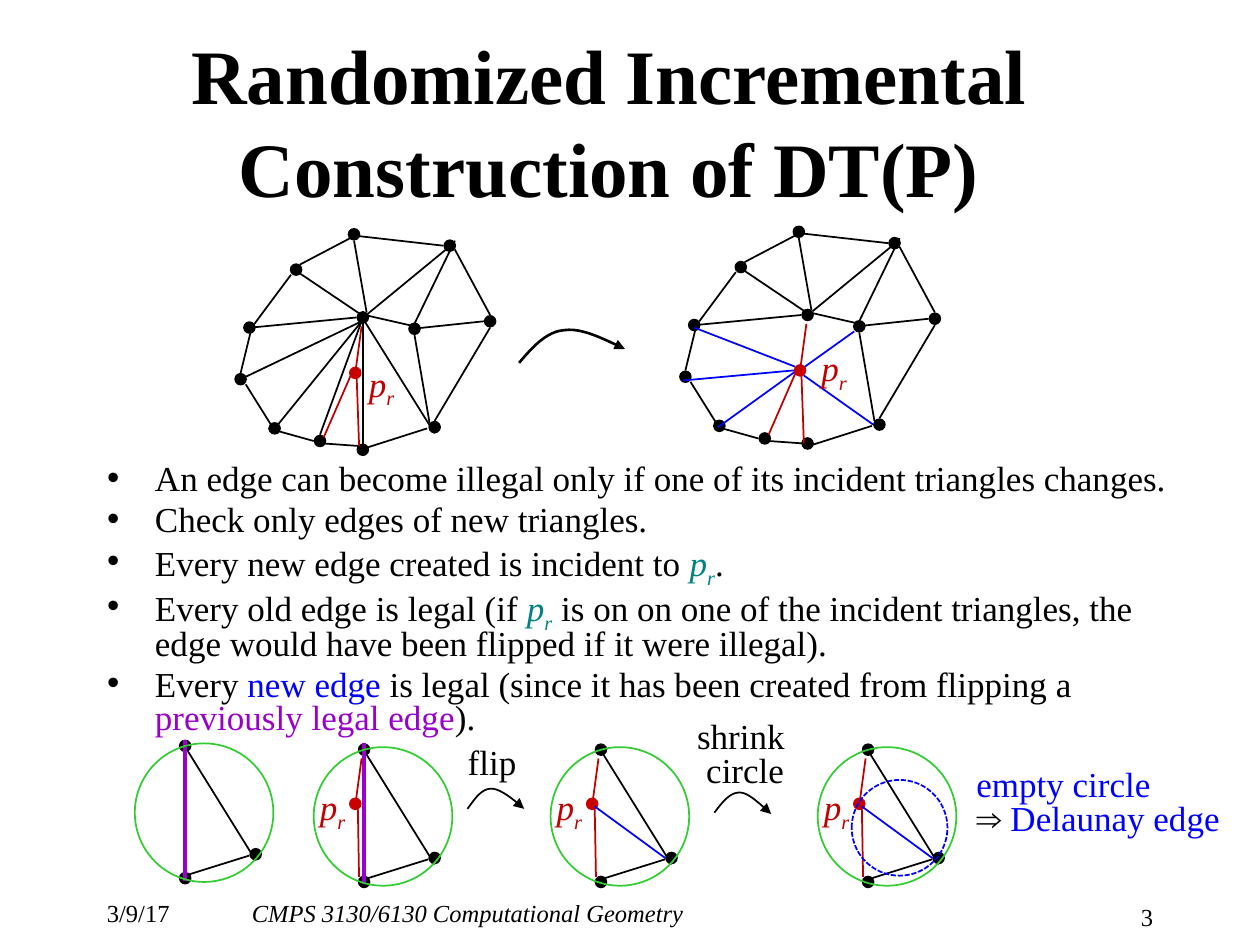
from typing import NamedTuple

from lxml.etree import SubElement
from pptx import Presentation
from pptx.dml.color import RGBColor
from pptx.enum.dml import MSO_LINE
from pptx.enum.shapes import MSO_CONNECTOR, MSO_SHAPE
from pptx.enum.text import MSO_ANCHOR, MSO_AUTO_SIZE, PP_ALIGN
from pptx.oxml.ns import qn
from pptx.util import Inches, Pt

FONT = "Times New Roman"
BLACK, BLUE, TEAL, PURPLE = "000000", "0000FF", "008380", "9900CC"
RED, DOT_RED, GREEN = "C00000", "CC0000", "33CC33"
DOT = 0.1

Point = tuple[float, float]


class Edge(NamedTuple):
    start: Point
    end: Point
    color: str = BLACK
    width: float = 1


class Run(NamedTuple):
    text: str
    color: str = BLACK
    italic: bool = False
    subscript: bool = False


class Stage(NamedTuple):
    """One circle drawing, placed by the corner of its top dot."""
    origin: Point
    has_point: bool = True
    has_old_edge: bool = False
    has_new_edge: bool = False


class CurvedArrow(NamedTuple):
    """A start point and two cubic segments of three points each."""
    points: list[Point]
    width: float = 1


MESH_DOTS = [(2.13, 3.35), (1.86, 2.96), (1.93, 2.55), (2.3, 2.09), (2.83, 2.47),
             (3.24, 2.56), (2.76, 1.81), (3.52, 1.9), (3.4, 3.34), (2.49, 3.45), (3.84, 2.5)]
MESH_EDGES = [
    Edge((2.78, 1.89), (2.38, 2.1)), Edge((2.02, 2.57), (2.31, 2.18)),
    Edge((1.91, 2.96), (2, 2.59)), Edge((2.15, 3.37), (1.95, 3.05)),
    Edge((2.49, 3.5), (2.13, 3.4)), Edge((2.85, 3.54), (2.57, 3.52)),
    Edge((3.39, 3.4), (2.92, 3.55)), Edge((3.29, 2.66), (3.41, 3.36)),
    Edge((2.85, 2.49), (3.29, 2.59)), Edge((2.38, 2.17), (2.87, 2.5)),
    Edge((2.81, 1.91), (2.91, 2.48)), Edge((3.54, 1.98), (2.92, 2.49)),
    Edge((3.61, 1.91), (3.27, 2.61)), Edge((2.81, 1.87), (3.52, 1.95)),
    Edge((3.61, 1.98), (3.89, 2.5)), Edge((3.89, 2.6), (3.45, 3.34)),
    Edge((3.84, 2.55), (3.27, 2.61)), Edge((1.99, 2.6), (2.83, 2.52)),
]
OLD_EDGES = [
    Edge((1.93, 3), (2.85, 2.56)), Edge((2.19, 3.39), (2.92, 2.49)),
    Edge((2.54, 3.45), (2.87, 2.55)), Edge((2.88, 3.59), (2.88, 2.47)),
    Edge((3.45, 3.44), (2.9, 2.56)),
]
NEW_EDGES = [
    Edge((1.98, 2.62), (2.78, 2.93), BLUE), Edge((1.89, 3.04), (2.77, 2.96), BLUE),
    Edge((3.4, 3.39), (2.85, 3), BLUE), Edge((3.25, 2.65), (2.83, 2.95), BLUE),
    Edge((2.17, 3.41), (2.78, 2.97), BLUE),
]
POINT_EDGES = [
    Edge((2.82, 2.96), (2.87, 2.59), RED), Edge((2.57, 3.47), (2.81, 2.92), RED),
    Edge((2.85, 3.54), (2.83, 2.97), RED),
]
STAGES = [
    Stage((1.42, 5.87), has_point=False, has_old_edge=True),
    Stage((2.84, 5.9), has_old_edge=True),
    Stage((4.72, 5.9), has_new_edge=True),
    Stage((6.84, 5.9), has_new_edge=True),
]
ARROWS = [
    CurvedArrow([(4.12, 2.88), (4.23, 2.75), (4.34, 2.63), (4.48, 2.62),
                 (4.62, 2.6), (4.79, 2.69), (4.96, 2.77)], 1.5),
    CurvedArrow([(3.71, 6.42), (3.77, 6.34), (3.82, 6.26), (3.9, 6.26),
                 (3.97, 6.26), (4.07, 6.34), (4.16, 6.42)]),
    CurvedArrow([(5.67, 6.45), (5.73, 6.37), (5.79, 6.29), (5.87, 6.29),
                 (5.94, 6.29), (6.03, 6.38), (6.12, 6.46)]),
]
POINT_NAME = [Run("p", TEAL, True), Run("r", TEAL, True, True)]
POINT_LABEL = [Run("p", RED, True), Run("r", RED, True, True)]
BULLETS = [
    [Run("An edge can become illegal only if one of its incident triangles changes.")],
    [Run("Check only edges of new triangles.")],
    [Run("Every new edge created is incident to "), *POINT_NAME, Run(".")],
    [Run("Every old edge is legal (if "), *POINT_NAME,
     Run(" is on on one of the incident triangles, the edge would have been flipped"
         " if it were illegal).")],
    [Run("Every "), Run("new edge ", BLUE),
     Run("is legal (since it has been created from flipping a "),
     Run("previously legal edge", PURPLE), Run(").")],
]


def rgb(color: str) -> RGBColor:
    return RGBColor.from_string(color)


def shift(point: Point, offset: Point) -> Point:
    return point[0] + offset[0], point[1] + offset[1]


def place(shape, left: float, top: float, width: float, height: float) -> None:
    shape.left, shape.top = Inches(left), Inches(top)
    shape.width, shape.height = Inches(width), Inches(height)


def add_runs(paragraph, runs: list[Run], size: float = 20, bold: bool = False) -> None:
    """Add each run; a run that is a newline becomes a line break."""
    for item in runs:
        if item.text == "\n":
            paragraph.add_line_break()
            continue
        run = paragraph.add_run()
        run.text = item.text
        font = run.font
        font.name, font.size, font.bold, font.italic = FONT, Pt(size), bold, item.italic
        font.color.rgb = rgb(item.color)
        if item.subscript:
            run._r.get_or_add_rPr().set("baseline", "-25000")


def add_text(shapes, box: tuple[float, float, float, float], runs: list[Run],
             size: float = 20, align=PP_ALIGN.LEFT, spacing: float = 1.0,
             wrap: bool = False) -> None:
    text_box = shapes.add_textbox(*map(Inches, box))
    text_box.text_frame.word_wrap = wrap
    paragraph = text_box.text_frame.paragraphs[0]
    paragraph.alignment, paragraph.line_spacing = align, spacing
    add_runs(paragraph, runs, size)


def add_dot(shapes, corner: Point, color: str = BLACK) -> None:
    dot = shapes.add_shape(MSO_SHAPE.OVAL, *map(Inches, (*corner, DOT, DOT)))
    dot.shadow.inherit = False
    dot.fill.solid()
    dot.fill.fore_color.rgb = rgb(color)
    dot.line.fill.background()


def add_circle(shapes, corner: Point, size: float, color: str, dash=None) -> None:
    circle = shapes.add_shape(MSO_SHAPE.OVAL, *map(Inches, (*corner, size, size)))
    circle.shadow.inherit = False
    circle.fill.background()
    circle.line.color.rgb, circle.line.width = rgb(color), Pt(1)
    if dash:
        circle.line.dash_style = dash


def add_edges(shapes, edges: list[Edge], offset: Point = (0, 0)) -> None:
    for edge in edges:
        ends = (*shift(edge.start, offset), *shift(edge.end, offset))
        line = shapes.add_connector(MSO_CONNECTOR.STRAIGHT, *map(Inches, ends))
        line.line.color.rgb, line.line.width = rgb(edge.color), Pt(edge.width)
        SubElement(line._element.spPr, qn("a:effectLst"))


def bezier(points: list[Point], t: float) -> Point:
    weights = ((1 - t) ** 3, 3 * t * (1 - t) ** 2, 3 * t * t * (1 - t), t ** 3)
    x, y = (sum(w * p[axis] for w, p in zip(weights, points)) for axis in (0, 1))
    return Inches(x), Inches(y)


def add_curved_arrow(shapes, arrow: CurvedArrow, steps: int = 12) -> None:
    track = [bezier(arrow.points[i:i + 4], step / steps)
             for i in (0, 3) for step in range(1, steps + 1)]
    builder = shapes.build_freeform(*map(Inches, arrow.points[0]))
    builder.add_line_segments(track, close=False)
    curve = builder.convert_to_shape()
    curve.shadow.inherit = False
    curve.fill.background()
    curve.line.color.rgb, curve.line.width = rgb(BLACK), Pt(arrow.width)
    SubElement(curve.line._get_or_add_ln(), qn("a:tailEnd"), type="triangle")


def add_mesh(shapes, offset: Point, bottom_dot: Point, inner_edges: list[Edge]) -> None:
    for corner in MESH_DOTS:
        add_dot(shapes, shift(corner, offset))
    add_dot(shapes, bottom_dot)
    add_edges(shapes, MESH_EDGES + inner_edges, offset)
    add_dot(shapes, shift((2.77, 2.91), offset), DOT_RED)
    add_edges(shapes, POINT_EDGES, offset)


def add_stage(shapes, stage: Stage) -> None:
    origin = stage.origin
    for corner in ((0, 0), (0.56, 0.86), (0, 1.05)):
        add_dot(shapes, shift(corner, origin))
    edges = [Edge((0.56, 0.92), (0.08, 1.07)), Edge((0.61, 0.96), (0.07, 0.09))]
    if stage.has_old_edge:
        edges.append(Edge((0.05, 1.12), (0.05, 0), PURPLE, 2.5))
    add_edges(shapes, edges, origin)
    if stage.has_point:
        add_dot(shapes, shift((-0.07, 0.43), origin), DOT_RED)
        add_edges(shapes, [Edge((-0.02, 0.49), (0.03, 0.12), RED),
                           Edge((0.01, 1.06), (0, 0.5), RED)], origin)
        add_text(shapes, (*shift((-0.4, 0.32), origin), 0.42, 0.37), POINT_LABEL, spacing=0.8)
    add_circle(shapes, shift((-0.35, 0.03), origin), 1.1, GREEN)
    if stage.has_new_edge:
        add_edges(shapes, [Edge((0.56, 0.91), (0, 0.5), BLUE)], origin)


def fill_placeholders(slide) -> None:
    title, body = slide.shapes.title, slide.placeholders[1]
    place(title, 0.71, 0.33, 8.25, 1.25)
    place(body, 0.75, 3.64, 8.73, 3)
    for shape, anchor in ((title, MSO_ANCHOR.MIDDLE), (body, MSO_ANCHOR.TOP)):
        shape.text_frame.auto_size = MSO_AUTO_SIZE.NONE
        shape.text_frame.vertical_anchor = anchor
    heading = title.text_frame.paragraphs[0]
    heading.alignment = PP_ALIGN.CENTER
    add_runs(heading, [Run("Randomized Incremental Construction of DT(P)")], 44, True)
    for index, runs in enumerate(BULLETS):
        frame = body.text_frame
        paragraph = frame.add_paragraph() if index else frame.paragraphs[0]
        paragraph.line_spacing, paragraph.space_before = 0.8, Pt(4 if index else 0)
        properties = paragraph._p.get_or_add_pPr()
        properties.set("marL", str(Inches(0.38)))
        properties.set("indent", str(Inches(-0.38)))
        SubElement(properties, qn("a:buChar"), char="•")
        add_runs(paragraph, runs)


def main() -> None:
    presentation = Presentation()
    presentation.slide_width, presentation.slide_height = Inches(10), Inches(7.5)
    slide = presentation.slides.add_slide(presentation.slide_layouts[1])
    shapes = slide.shapes
    fill_placeholders(slide)
    add_text(shapes, (0.75, 7.08, 0.95, 0.25), [Run("3/9/17")], 14)
    add_text(shapes, (1.9, 7.08, 6.34, 0.25),
             [Run("CMPS 3130/6130 Computational Geometry", italic=True)], 14)
    add_text(shapes, (8.51, 7.11, 0.74, 0.22), [Run("3")], 14, PP_ALIGN.RIGHT, wrap=True)

    add_mesh(shapes, (0, 0), (2.83, 3.52), OLD_EDGES)
    add_mesh(shapes.add_group_shape().shapes, (3.53, -0.02), (6.36, 3.47), NEW_EDGES)
    for corner in ((2.83, 2.86), (6.42, 2.74)):
        add_text(shapes, (*corner, 0.42, 0.37), POINT_LABEL, spacing=0.8)

    for stage in STAGES:
        add_stage(shapes, stage)
    add_circle(shapes, (6.76, 6.19), 0.76, BLUE, MSO_LINE.SQUARE_DOT)
    for arrow in ARROWS:
        add_curved_arrow(shapes, arrow)
    add_text(shapes, (3.61, 5.83, 0.59, 0.44), [Run("flip")], align=PP_ALIGN.CENTER)
    add_text(shapes, (5.43, 5.69, 0.9, 0.64), [Run("shrink"), Run("\n"), Run(" circle")],
             align=PP_ALIGN.CENTER, spacing=0.8)
    add_text(shapes, (7.65, 6.07, 2.21, 0.64),
             [Run("empty circle", BLUE), Run("\n"), Run("⇒ "), Run("Delaunay edge", BLUE)],
             spacing=0.8, wrap=True)
    presentation.save("out.pptx")


if __name__ == "__main__":
    main()
